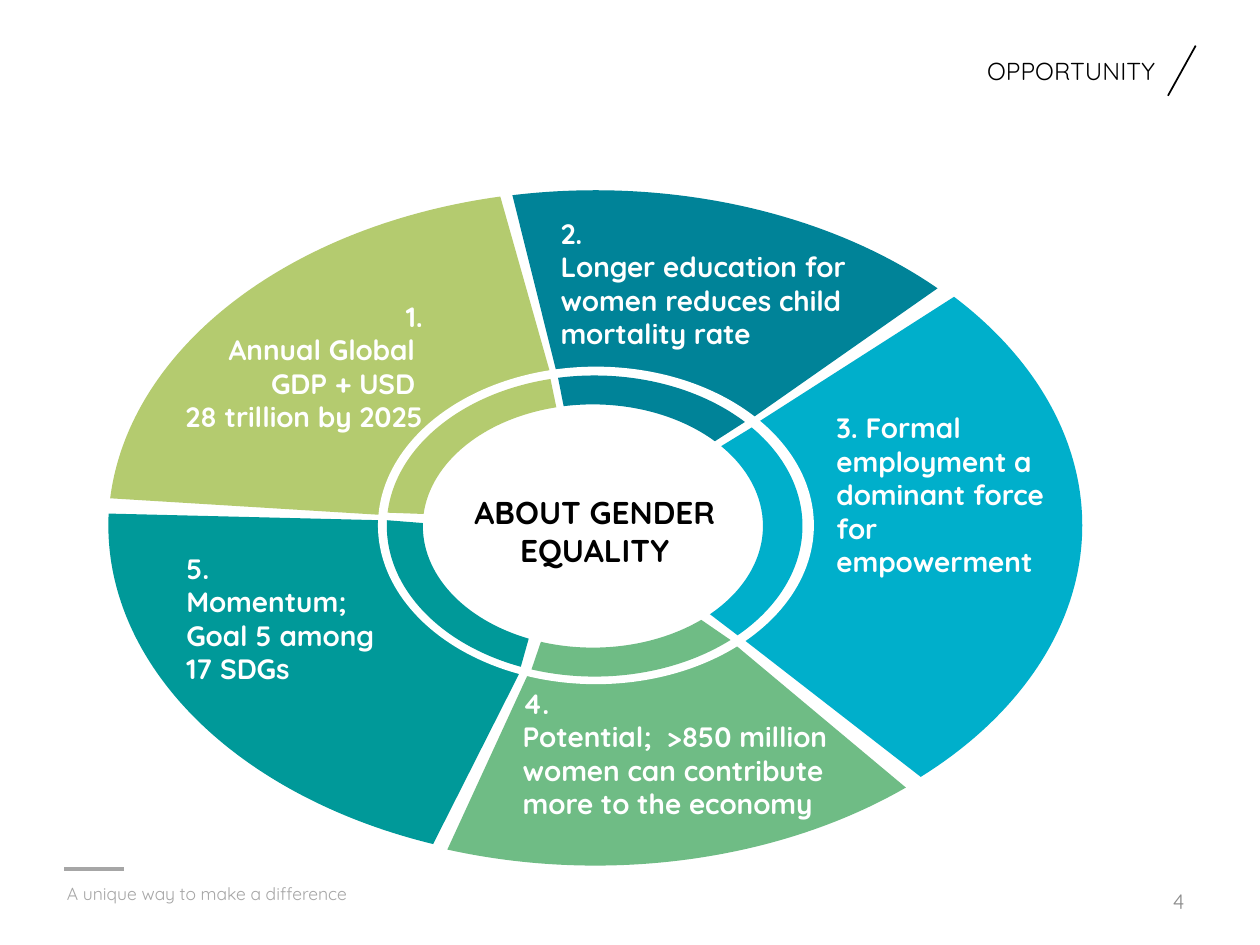
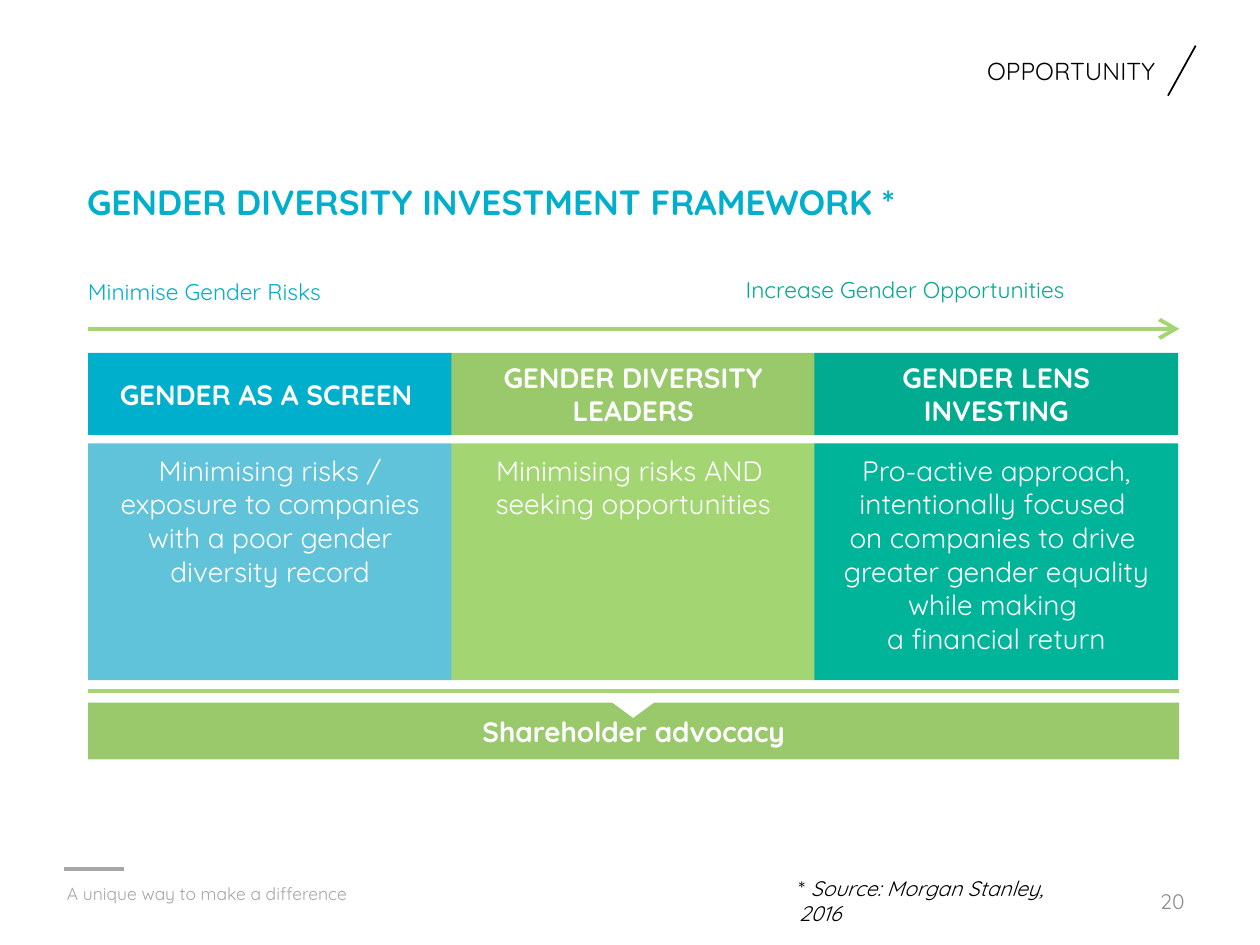
from math import atan2, cos, pi, radians, sin, tan

from lxml.etree import SubElement
from pptx import Presentation
from pptx.dml.color import RGBColor
from pptx.enum.shapes import MSO_CONNECTOR, MSO_SHAPE
from pptx.enum.text import MSO_ANCHOR, PP_ALIGN
from pptx.oxml.ns import qn
from pptx.util import Inches, Pt

FONT = "Quicksand"
WHITE, BLACK, GREY, PAGE_GREY = "FFFFFF", "000000", "A6A6A6", "8C8C8C"
CYAN, EMERALD, LIGHT_GREEN, LEAF = "00AFCB", "00AB90", "A3D673", "99C96B"
LEFT, CENTER, RIGHT = PP_ALIGN.LEFT, PP_ALIGN.CENTER, PP_ALIGN.RIGHT
TOP, MIDDLE, BOTTOM = MSO_ANCHOR.TOP, MSO_ANCHOR.MIDDLE, MSO_ANCHOR.BOTTOM

hex_color = RGBColor.from_string
prs = Presentation()
prs.slide_width, prs.slide_height = Inches(10), Inches(7.5)
col, row = prs.slide_width // 100, prs.slide_height // 100


def block(slide, box, fill="", kind=MSO_SHAPE.RECTANGLE):
    place = [int(share * unit) for share, unit in zip(box, (col, row, col, row))]
    if not fill:
        return slide.shapes.add_textbox(*place)
    shape = slide.shapes.add_shape(kind, *place)
    shape.shadow.inherit = False
    shape.fill.solid()
    shape.fill.fore_color.rgb = hex_color(fill)
    shape.line.fill.background()
    return shape


def write(shape, text, size, color, bold=False, align=LEFT, anchor=MIDDLE):
    frame = shape.text_frame
    frame.text = text
    frame.word_wrap = True
    frame.vertical_anchor = anchor
    for paragraph in frame.paragraphs:
        paragraph.alignment = align
        for run in paragraph.runs:
            run.font.name, run.font.size, run.font.bold = FONT, Pt(size), bold
            run.font.color.rgb = hex_color(color)
    return frame


layout = prs.slide_layouts[5]
equality = prs.slides.add_slide(layout)
framework = prs.slides.add_slide(layout)

for slide, number in ((equality, "4"), (framework, "20")):
    title = slide.shapes.title
    title.left, title.top = int(4.9 * col), int(2.4 * row)
    title.width, title.height = int(87.8 * col), int(10.13 * row)
    write(title, "OPPORTUNITY", 14, BLACK, align=RIGHT)
    write(block(slide, (71.7, 92.67, 23.3, 5.33)), number, 12, PAGE_GREY, align=RIGHT)
    motto = block(slide, (4.33, 93.07, 37.8, 5.33))
    write(motto, "A unique way to make a difference", 10, GREY, anchor=TOP).margin_top = Inches(0.03)

sectors = [
    ("6FBC85", 8.7, 20.13, (39.9, 114.7), (40, 113.8), (40.9, 114.2)),
    ("009999", 8.6, 19.87, (116.8, 181.4), (117.7, 181.6), (119.7, 181)),
    (CYAN, 8.8, 19.87, (327.4, 397.8), (327.9, 397.4), (328.1, 397)),
    ("B4CB6F", 8.6, 20.13, (183.5, 254.2), (183.7, 253.3), (184.1, 252.9)),
    ("008398", 8.7, 20.13, (256, 325), (256.1, 325.3), (256.3, 325.2)),
]
for color, left, top, (start, end), outer, inner in sectors:
    sector = block(equality, (left, top, 77.1, 71.47), color, MSO_SHAPE.PIE)
    sector.adjustments[0], sector.adjustments[1] = start * 0.6, end % 360 * 0.6

block(equality, (30, 38.8, 34.6, 33.6), WHITE, MSO_SHAPE.OVAL)

center_y = 55.67 * row
for color, left, top, span, outer, inner in sectors:
    corners, bends = [], []
    for center, across, down, (start, end) in ((47.2, 16.5, 15.93, outer),
                                               (47.06, 13.5, 12.87, inner[::-1])):
        center_x, radius_x, radius_y = center * col, across * col, down * row
        quarters = [angle for angle in (90, 270, 360) if min(start, end) < angle < max(start, end)]
        turns = [atan2(radius_x * sin(radians(angle)), radius_y * cos(radians(angle)))
                 for angle in (start, *quarters, end)]
        for index, turn in enumerate(turns):
            corner = (center_x + radius_x * cos(turn), center_y + radius_y * sin(turn))
            if index:
                sweep = (turn - turns[index - 1] + pi) % (2 * pi) - pi
                pull = 4 / 3 * tan(sweep / 4)
                bends.append([
                    (center_x + radius_x * (cos(angle) - side * pull * sin(angle)),
                     center_y + radius_y * (sin(angle) + side * pull * cos(angle)))
                    for angle, side in ((turns[index - 1], 1), (turn, -1))])
            elif corners:
                bends.append(None)
            corners.append((int(corner[0]), int(corner[1])))
    builder = equality.shapes.build_freeform(*corners[0])
    builder.add_line_segments(corners[1:], close=True)
    band = builder.convert_to_shape()
    band.shadow.inherit = False
    band.fill.solid()
    band.fill.fore_color.rgb = hex_color(color)
    band.line.fill.background()
    for edge, bend in zip(list(band.element.iter(qn("a:lnTo"))), bends):
        if bend:
            edge.tag = qn("a:cubicBezTo")
            for index, (x, y) in enumerate(bend):
                control = SubElement(edge, qn("a:pt"), x=str(int(x - band.left)), y=str(int(y - band.top)))
                edge.insert(index, control)

facts = [
    ((9.05, 32.93, 25.5, 13.6), "1.\nAnnual Global \nGDP + USD \n28 trillion by 2025", RIGHT),
    ((40.5, 73.87, 27.9, 13.6),
     "4.\nPotential;  >850 million\nwomen can contribute\nmore to the economy", LEFT),
    ((65.4, 48.27, 18.7, 13.6), "3. Formal employment a dominant force for empowerment", LEFT),
    ((43.5, 24.13, 35.2, 13.6),
     "2.\nLonger education for\nwomen reduces child\nmortality rate", LEFT),
    ((13.8, 59.6, 27.8, 13.6), "5.\nMomentum;\nGoal 5 among\n17 SDGs", LEFT),
]
for box, fact, align in facts:
    write(block(equality, box), fact, 16, WHITE, True, align, BOTTOM)
write(block(equality, (34.45, 49.37, 25.5, 13.6)), "ABOUT GENDER EQUALITY", 18, BLACK, True, CENTER)

write(block(framework, (5.93, 18.4, 88, 7.87)), "GENDER DIVERSITY INVESTMENT FRAMEWORK *",
      20, CYAN, True, anchor=TOP)
write(block(framework, (6, 28.73, 22.3, 4.27)), "Minimise Gender Risks", 13, CYAN, anchor=TOP)
write(block(framework, (58.2, 28.53, 30.3, 4.27)), "Increase Gender Opportunities",
      13, EMERALD, anchor=TOP)

margin, full_width = 7, 86.6
stage_pitch, stage_width = 28.82, 28.87
stages = [
    ("GENDER AS A SCREEN ", CYAN, "61C3D9",
     "Minimising risks / exposure to companies with a poor gender diversity record"),
    ("GENDER DIVERSITY LEADERS", LEAF, LIGHT_GREEN,
     "Minimising risks AND \nseeking opportunities"),
    ("GENDER LENS INVESTING", EMERALD, "00B49A",
     "Pro-active approach, intentionally focused \non companies to drive \n"
     "greater gender equality while making \na financial return"),
]
for index, (stage, head_color, body_color, approach) in enumerate(stages):
    stage_left = margin + index * stage_pitch
    head = block(framework, (stage_left, 37.35, stage_width, 8.67), head_color)
    write(head, stage, 16, WHITE, True, CENTER)
    body = block(framework, (stage_left, 46.92, stage_width, 25.07), body_color)
    body_frame = write(body, approach, 16, WHITE, False, CENTER, TOP)
    body_frame.margin_left = body_frame.margin_right = Inches(0.12)
    body_frame.margin_top = body_frame.margin_bottom = Inches(0.08)

advocacy = block(framework, (margin, 74.35, full_width, 6), LEAF)
write(advocacy, "Shareholder advocacy", 16, WHITE, True, CENTER)
notch = block(framework, (48.35, 74.1, 3.8, 1.87), WHITE, MSO_SHAPE.ISOSCELES_TRIANGLE)
notch.rotation = 180

source = write(block(framework, (62.4, 92, 23.6, 4)), "* ", 12, BLACK, anchor=TOP)
citation = source.paragraphs[0].add_run()
citation.text = "Source: Morgan Stanley, 2016"
citation.font.name, citation.font.size, citation.font.italic = FONT, Pt(12), True
citation.font.color.rgb = hex_color(BLACK)

strokes = [
    ((margin, 34.8, margin + full_width, 34.8), LIGHT_GREEN, 2.25, True, False),
    ((margin, 73.1, margin + full_width, 73.1), LIGHT_GREEN, 2.25, False, False),
    ((92.7, 10.13, 94.9, 4.83), BLACK, 1, False, True),
    ((5.1, 92, 9.84, 92), GREY, 2.25, False, True),
]
for ends, color, weight, arrow, shared in strokes:
    points = [int(share * unit) for share, unit in zip(ends, (col, row, col, row))]
    stroke = framework.shapes.add_connector(MSO_CONNECTOR.STRAIGHT, *points)
    stroke.line.color.rgb = hex_color(color)
    stroke.line.width = Pt(weight)
    if arrow:
        SubElement(stroke.line._get_or_add_ln(), qn("a:tailEnd"), type="arrow", w="lg", len="lg")
    SubElement(stroke.element.spPr, qn("a:effectLst"))
    if shared:
        layout.shapes.element.append(stroke.element)

prs.save("out.pptx")
